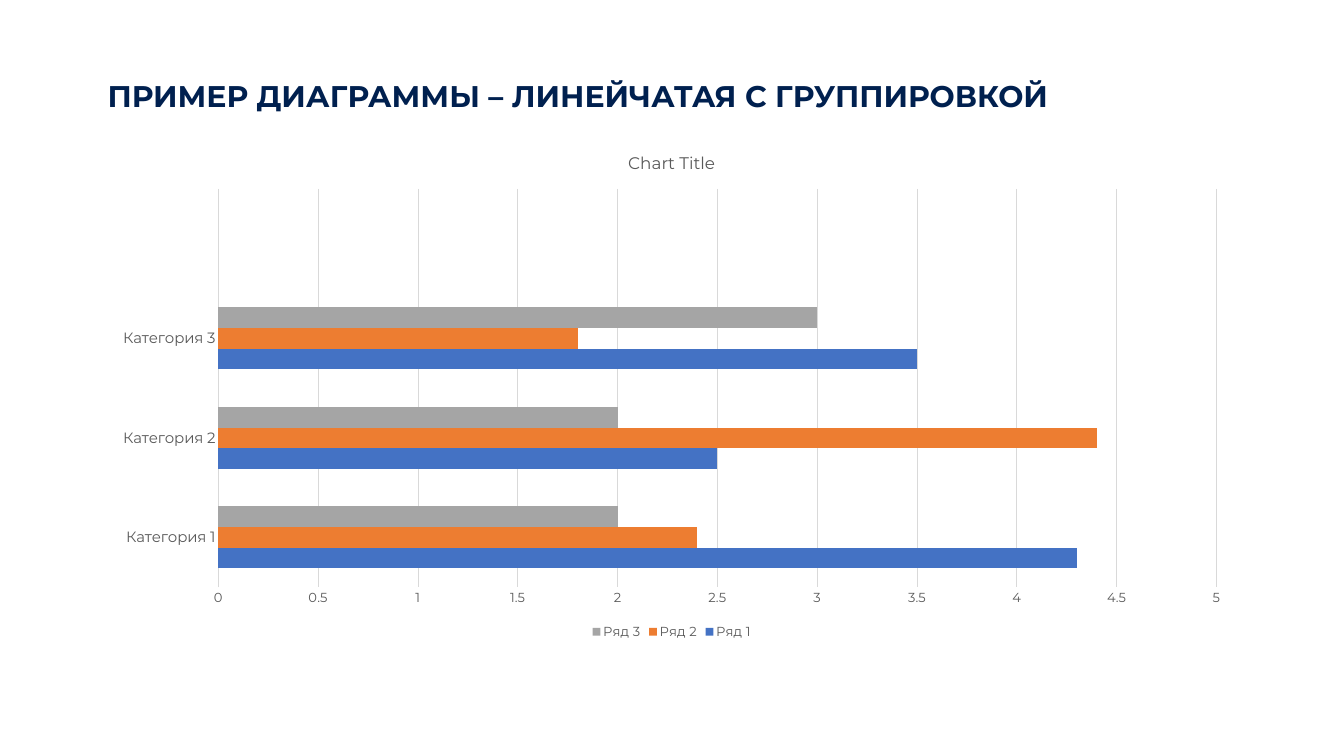
from dataclasses import dataclass

from pptx import Presentation
from pptx.chart.chart import Chart
from pptx.chart.data import CategoryChartData
from pptx.dml.color import RGBColor
from pptx.enum.chart import XL_CHART_TYPE, XL_LEGEND_POSITION, XL_TICK_MARK
from pptx.enum.text import MSO_ANCHOR, MSO_AUTO_SIZE, PP_ALIGN
from pptx.slide import Slide
from pptx.text.text import Font
from pptx.util import Inches, Pt

CLUSTERED_BARS = XL_CHART_TYPE.BAR_CLUSTERED
LEGEND_BOTTOM = XL_LEGEND_POSITION.BOTTOM
NO_TICKS = XL_TICK_MARK.NONE
TITLE_ONLY = 5
SLIDE_WIDTH, SLIDE_HEIGHT = Inches(20), Inches(11.25)


@dataclass(frozen=True)
class Theme:
    typeface: str = "Montserrat"
    heading: str = "00204F"
    label: str = "595959"
    rule: str = "D9D9D9"
    background: str = "FFFFFF"
    heading_size: int = 32
    caption_size: int = 18
    category_size: int = 16
    small_size: int = 14
    rule_width: float = 0.75


@dataclass(frozen=True)
class Box:
    """Shares of the slide's width and height."""
    left: float
    top: float
    width: float
    height: float

    def lengths(self) -> tuple[int, int, int, int]:
        return (int(self.left * SLIDE_WIDTH), int(self.top * SLIDE_HEIGHT),
                int(self.width * SLIDE_WIDTH), int(self.height * SLIDE_HEIGHT))


@dataclass(frozen=True)
class Series:
    name: str
    values: tuple[float | None, ...]
    color: str


THEME = Theme()
HEADING_BOX = Box(0.075, 0.08, 0.864, 0.098)
CHART_BOX = Box(0.0745, 0.178, 0.8505, 0.672)
# The last category is an empty row above the bars.
CATEGORIES = ("Категория 1", "Категория 2", "Категория 3", "")
SERIES = (
    Series("Ряд 1", (4.3, 2.5, 3.5, None), "4472C4"),
    Series("Ряд 2", (2.4, 4.4, 1.8, None), "ED7D31"),
    Series("Ряд 3", (2, 2, 3, None), "A5A5A5"),
)


def style_font(font: Font, size: int, color: str, bold: bool = False) -> None:
    font.name = THEME.typeface
    font.size = Pt(size)
    font.bold = bold
    font.color.rgb = RGBColor.from_string(color)


def style_rule(line) -> None:
    line.color.rgb = RGBColor.from_string(THEME.rule)
    line.width = Pt(THEME.rule_width)


def add_heading(slide: Slide, text: str) -> None:
    heading = slide.shapes.title
    heading.left, heading.top, heading.width, heading.height = HEADING_BOX.lengths()
    frame = heading.text_frame
    frame.text = text
    frame.word_wrap = True
    frame.auto_size = MSO_AUTO_SIZE.NONE
    frame.vertical_anchor = MSO_ANCHOR.MIDDLE
    paragraph = frame.paragraphs[0]
    paragraph.alignment = PP_ALIGN.LEFT
    paragraph.line_spacing = 0.9
    style_font(paragraph.font, THEME.heading_size, THEME.heading, bold=True)


def style_axes(chart: Chart) -> None:
    for axis, size in ((chart.category_axis, THEME.category_size),
                       (chart.value_axis, THEME.small_size)):
        axis.major_tick_mark = axis.minor_tick_mark = NO_TICKS
        style_font(axis.tick_labels.font, size, THEME.label)
    style_rule(chart.category_axis.format.line)

    values = chart.value_axis
    values.minimum_scale, values.maximum_scale, values.major_unit = 0, 5, 0.5
    values.tick_labels.number_format = "General"
    values.tick_labels.number_format_is_linked = False
    values.format.line.fill.background()
    values.has_major_gridlines = True
    style_rule(values.major_gridlines.format.line)


def add_bar_chart(slide: Slide, caption: str) -> None:
    data = CategoryChartData()
    data.categories = CATEGORIES
    for series in SERIES:
        data.add_series(series.name, series.values)
    chart = slide.shapes.add_chart(CLUSTERED_BARS, *CHART_BOX.lengths(), data).chart
    chart.font.name = THEME.typeface

    chart.has_title = True
    caption_frame = chart.chart_title.text_frame
    caption_frame.text = caption
    style_font(caption_frame.paragraphs[0].font, THEME.caption_size, THEME.label)

    chart.has_legend = True
    chart.legend.position = LEGEND_BOTTOM
    chart.legend.include_in_layout = False
    style_font(chart.legend.font, THEME.small_size, THEME.label)

    style_axes(chart)
    bars = chart.plots[0]
    bars.gap_width = 182
    bars.vary_by_categories = False
    for drawn, series in zip(bars.series, SERIES):
        drawn.format.fill.solid()
        drawn.format.fill.fore_color.rgb = RGBColor.from_string(series.color)


def main() -> None:
    presentation = Presentation()
    presentation.slide_width, presentation.slide_height = SLIDE_WIDTH, SLIDE_HEIGHT
    slide = presentation.slides.add_slide(presentation.slide_layouts[TITLE_ONLY])
    slide.background.fill.solid()
    slide.background.fill.fore_color.rgb = RGBColor.from_string(THEME.background)
    add_heading(slide, "ПРИМЕР ДИАГРАММЫ – ЛИНЕЙЧАТАЯ С ГРУППИРОВКОЙ")
    add_bar_chart(slide, "Chart Title")
    presentation.save("out.pptx")


if __name__ == "__main__":
    main()
